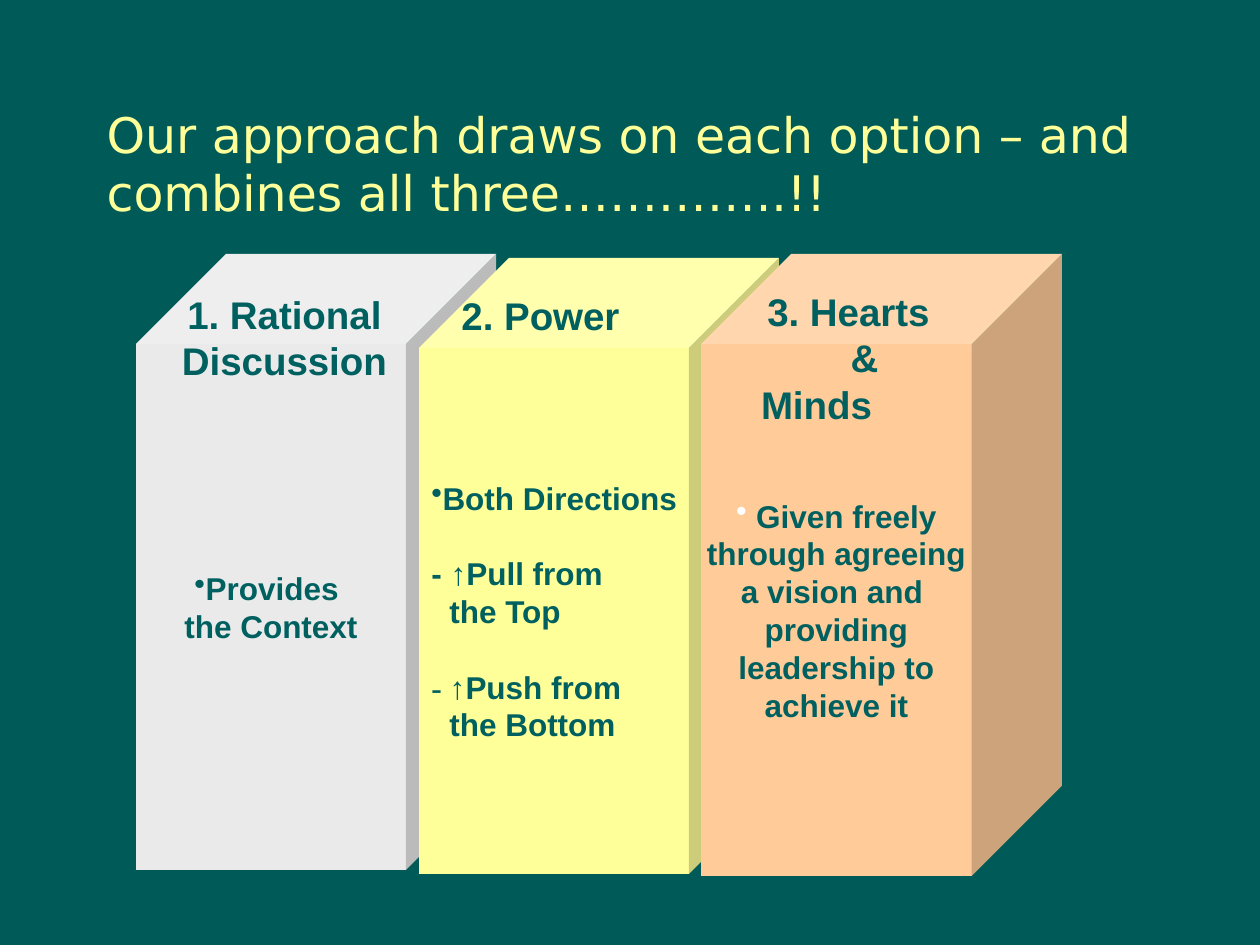
from lxml.etree import SubElement
from pptx import Presentation
from pptx.dml.color import RGBColor
from pptx.enum.shapes import MSO_SHAPE
from pptx.enum.text import MSO_ANCHOR, PP_ALIGN
from pptx.oxml.ns import qn
from pptx.util import Emu, Pt

PX = 914400 // 126  # EMU per px

THEME = {
    "background": "005A58", "title": "FFFF99", "ink": "006060", "white": "FFFFFF",
    "font": "Arial", "title_font": "DejaVu Sans", "arrow_font": "Times New Roman",
    "title_size": 28, "label_size": 22, "body_size": 18,
}
BLANK_LINE = 21.6  # points between groups of lines
HANG = 18  # px, aligns wrapped lines with the text after the dash

TITLE = "Our approach draws on each option – and combines all three…………..!!"
TITLE_BOX = (94, 84, 1071, 158)

# A line is a dict of paragraph options and spans; a span is (text, format changes)
CUBES = [
    {"box": (136, 254, 360, 616), "fill": "EAEAEA", "align": PP_ALIGN.CENTER,
     "lines": [{"spans": [("Provides ", {})], "bullet": True},
               {"spans": [("the Context", {})]}]},
    {"box": (419, 258, 360, 616), "fill": "FFFF99", "align": PP_ALIGN.LEFT,
     "lines": [{"spans": [("Both Directions", {})], "bullet": True},
               {"spans": [("- ↑Pull from", {})], "before": BLANK_LINE},
               {"spans": [("the Top", {})], "indent": HANG},
               {"spans": [("- ↑", {"font": "arrow_font"}), ("Push from", {})],
                "before": BLANK_LINE},
               {"spans": [("the Bottom", {})], "indent": HANG}]},
    {"box": (701, 254, 361, 622), "fill": "FFCC99", "align": PP_ALIGN.CENTER,
     "lines": [{"spans": [(" ", {"color": "white"}), ("Given freely", {})], "bullet": True}]
     + [{"spans": [(text, {})]} for text in (
         "through agreeing", "a vision and ", "providing", "leadership to", "achieve it")]},
]

LABELS = [
    {"box": (161, 285, 247, 105), "lines": [{"spans": [("1. Rational Discussion", {})]}]},
    {"box": (417, 286, 247, 59), "lines": [{"spans": [("2. Power", {})]}]},
    {"box": (687, 282, 259, 106),
     "lines": [{"spans": [("3. Hearts", {})], "indent": 64},
               {"spans": [("&", {})], "indent": 96},
               {"spans": [("Minds", {})]}]},
]


def color(value):
    return RGBColor.from_string(value)


def scaled(box):
    return [Emu(length * PX) for length in box]


def format_span(span, size, bold=True, font="font", ink="ink"):
    values = {"size": Pt(size), "bold": bold, "name": THEME[font]}
    for name, value in values.items():
        setattr(span.font, name, value)
    span.font.color.rgb = color(THEME[ink])


def write_lines(frame, lines, align, size):
    for index, line in enumerate(lines):
        para = frame.paragraphs[0] if index == 0 else frame.add_paragraph()
        properties = para._p.get_or_add_pPr()
        properties.set("marL", str(line.get("indent", 0) * PX))
        properties.set("indent", "0")
        if line.get("bullet"):
            SubElement(properties, qn("a:buChar"), char="•")
        para.alignment = align
        if "before" in line:
            para.space_before = Pt(line["before"])
        for text, changes in line["spans"]:
            span = para.add_run()
            span.text = text
            format_span(span, size, font=changes.get("font", "font"),
                        ink=changes.get("color", "ink"))


def add_title(page):
    title = page.shapes.title
    title.left, title.top, title.width, title.height = scaled(TITLE_BOX)
    frame = title.text_frame
    frame.text = TITLE
    frame.word_wrap = True
    frame.vertical_anchor = MSO_ANCHOR.MIDDLE
    para = frame.paragraphs[0]
    para.alignment = PP_ALIGN.LEFT
    format_span(para.runs[0], THEME["title_size"], False, "title_font", "title")


def add_cube(page, cube):
    shape = page.shapes.add_shape(MSO_SHAPE.CUBE, *scaled(cube["box"]))
    shape.adjustments[0] = 0.25
    shape.shadow.inherit = False
    shape.fill.solid()
    shape.fill.fore_color.rgb = color(cube["fill"])
    shape.line.fill.background()
    frame = shape.text_frame
    frame.word_wrap = False
    frame.vertical_anchor = MSO_ANCHOR.MIDDLE
    write_lines(frame, cube["lines"], cube["align"], THEME["body_size"])


def add_label(page, label):
    box = page.shapes.add_textbox(*scaled(label["box"]))
    box.text_frame.word_wrap = True
    write_lines(box.text_frame, label["lines"], PP_ALIGN.CENTER, THEME["label_size"])


def main():
    deck = Presentation()
    deck.slide_width, deck.slide_height = scaled((1260, 945))
    page = deck.slides.add_slide(deck.slide_layouts[5])
    page.background.fill.solid()
    page.background.fill.fore_color.rgb = color(THEME["background"])

    # Title, then the three blocks, then the headings on top of them
    add_title(page)
    for cube in CUBES:
        add_cube(page, cube)
    for label in LABELS:
        add_label(page, label)
    deck.save("out.pptx")


if __name__ == "__main__":
    main()
